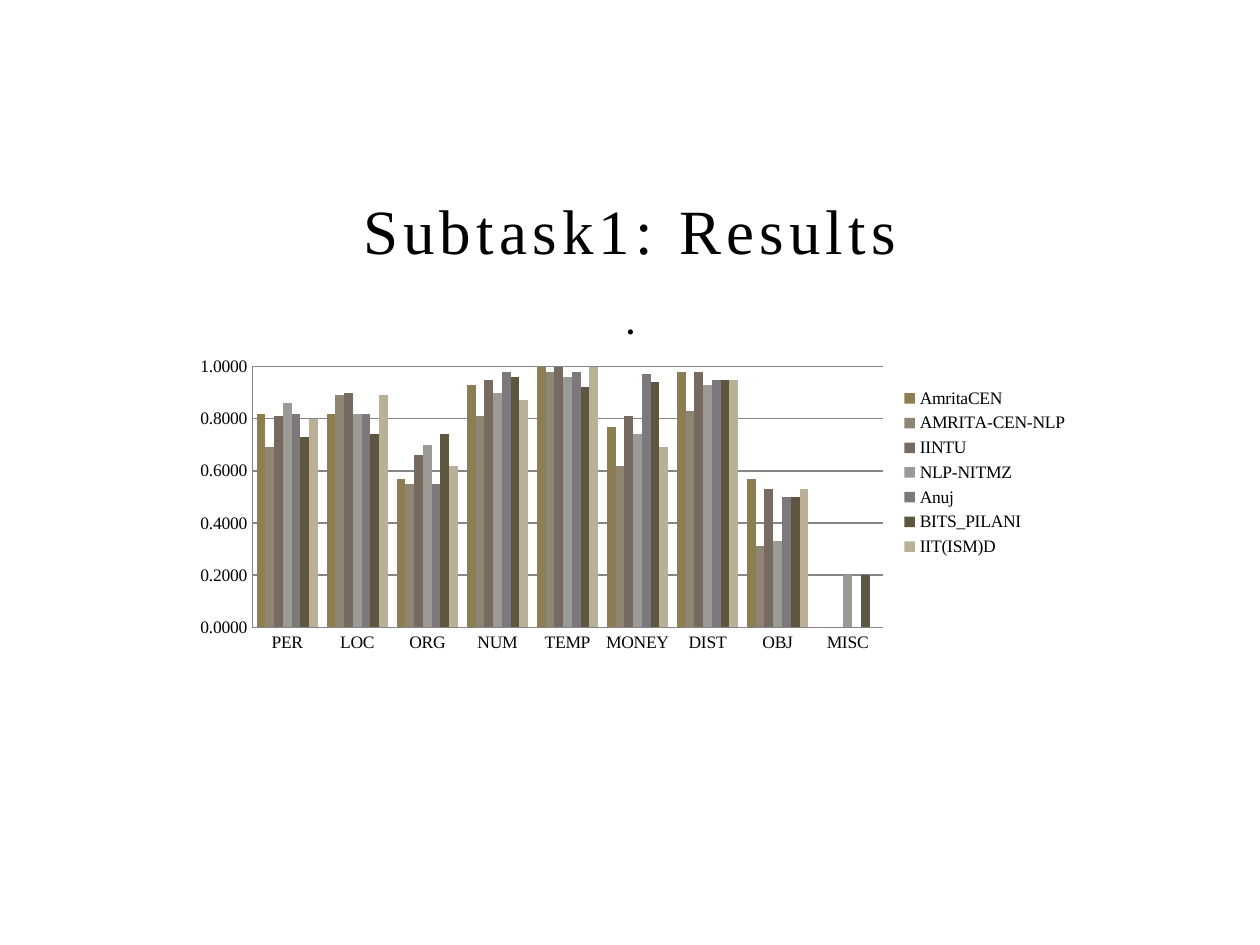
from lxml import etree
from pptx import Presentation
from pptx.chart.data import CategoryChartData
from pptx.dml.color import RGBColor
from pptx.enum.chart import XL_CHART_TYPE as ChartType
from pptx.enum.chart import XL_LEGEND_POSITION as LegendPosition
from pptx.enum.chart import XL_TICK_MARK as TickMark
from pptx.enum.text import MSO_ANCHOR as Anchor
from pptx.enum.text import PP_ALIGN as Align
from pptx.oxml.ns import qn
from pptx.util import Inches, Pt

FONT = "Times New Roman"
COLORS = {
    "text": "000000",
    "line": "868686",
    "AmritaCEN": "8C7E50",
    "AMRITA-CEN-NLP": "8F8573",
    "IINTU": "776B61",
    "NLP-NITMZ": "9A9B95",
    "Anuj": "7D787C",
    "BITS_PILANI": "5F563F",
    "IIT(ISM)D": "B9B095",
}
CATEGORIES = ["PER", "LOC", "ORG", "NUM", "TEMP", "MONEY", "DIST", "OBJ", "MISC"]
SCORES = {
    "AmritaCEN": [0.82, 0.82, 0.57, 0.93, 1, 0.77, 0.98, 0.57, 0],
    "AMRITA-CEN-NLP": [0.69, 0.89, 0.55, 0.81, 0.98, 0.62, 0.83, 0.31, 0],
    "IINTU": [0.81, 0.9, 0.66, 0.95, 1, 0.81, 0.98, 0.53, 0],
    "NLP-NITMZ": [0.86, 0.82, 0.7, 0.9, 0.96, 0.74, 0.93, 0.33, 0.2],
    "Anuj": [0.82, 0.82, 0.55, 0.98, 0.98, 0.97, 0.95, 0.5, 0],
    "BITS_PILANI": [0.73, 0.74, 0.74, 0.96, 0.92, 0.94, 0.95, 0.5, 0.2],
    "IIT(ISM)D": [0.8, 0.89, 0.62, 0.87, 1, 0.69, 0.95, 0.53, 0],
}


def color(name):
    return RGBColor.from_string(COLORS[name])


def style_font(font, size, bold=False):
    font.name = FONT
    font.size = Pt(size)
    font.bold = bold
    font.color.rgb = color("text")


def style_line(line):
    line.color.rgb = color("line")
    line.width = Pt(0.75)


def add_title(slide, text):
    box = slide.shapes.add_textbox(Inches(1.5), Inches(1.42), Inches(7), Inches(0.75))
    frame = box.text_frame
    frame.word_wrap = True
    frame.vertical_anchor = Anchor.BOTTOM
    frame.text = text
    paragraph = frame.paragraphs[0]
    paragraph.alignment = Align.CENTER
    run = paragraph.runs[0]
    style_font(run.font, 36)
    run.font._element.set("spc", "300")  # letter spacing of 3 pt


def place_plot(chart, **fractions):
    """Fix the inner plot area, in fractions of the chart frame."""
    plot_area = chart._chartSpace.chart.plotArea
    for old_layout in plot_area.findall(qn("c:layout")):
        plot_area.remove(old_layout)
    layout = etree.Element(qn("c:layout"))
    manual = etree.SubElement(layout, qn("c:manualLayout"))
    settings = {"layoutTarget": "inner", "xMode": "edge", "yMode": "edge", **fractions}
    for tag, value in settings.items():
        etree.SubElement(manual, qn(f"c:{tag}")).set("val", str(value))
    plot_area.insert(0, layout)


def style_axes(chart):
    for axis in (chart.category_axis, chart.value_axis):
        axis.major_tick_mark = axis.minor_tick_mark = TickMark.NONE
        style_line(axis.format.line)
        style_font(axis.tick_labels.font, 10)
    values = chart.value_axis
    values.minimum_scale, values.maximum_scale = 0, 1
    values.major_unit = 0.2
    values.has_major_gridlines = True
    style_line(values.major_gridlines.format.line)
    values.tick_labels.number_format = "0.0000"
    values.tick_labels.number_format_is_linked = False


def add_results_chart(slide):
    data = CategoryChartData(number_format="0.0000")
    data.categories = CATEGORIES
    for team, scores in SCORES.items():
        data.add_series(team, scores)
    chart = slide.shapes.add_chart(
        ChartType.COLUMN_CLUSTERED,
        Inches(1.43), Inches(2.25), Inches(7.15), Inches(3), data,
    ).chart
    style_font(chart.font, 10)

    # Chart title
    chart.has_title = True
    title_frame = chart.chart_title.text_frame
    title_frame.text = "."
    style_font(title_frame.paragraphs[0].runs[0].font, 18, bold=True)
    chart.chart_title.include_in_layout = False

    # Legend
    chart.has_legend = True
    chart.legend.position = LegendPosition.RIGHT
    chart.legend.include_in_layout = False
    style_font(chart.legend.font, 10)

    # Columns
    plot = chart.plots[0]
    plot.gap_width = 100
    plot.overlap = 0
    plot.vary_by_categories = False
    for series in plot.series:
        series.format.fill.solid()
        series.format.fill.fore_color.rgb = color(series.name)

    style_axes(chart)
    place_plot(chart, x=0.08, y=0.22, w=0.7, h=0.69)


def main():
    presentation = Presentation()
    presentation.slide_width = Inches(10)
    presentation.slide_height = Inches(7.5)
    slide = presentation.slides.add_slide(presentation.slide_layouts[6])
    add_results_chart(slide)
    add_title(slide, "Subtask1: Results")
    presentation.save("out.pptx")


if __name__ == "__main__":
    main()
